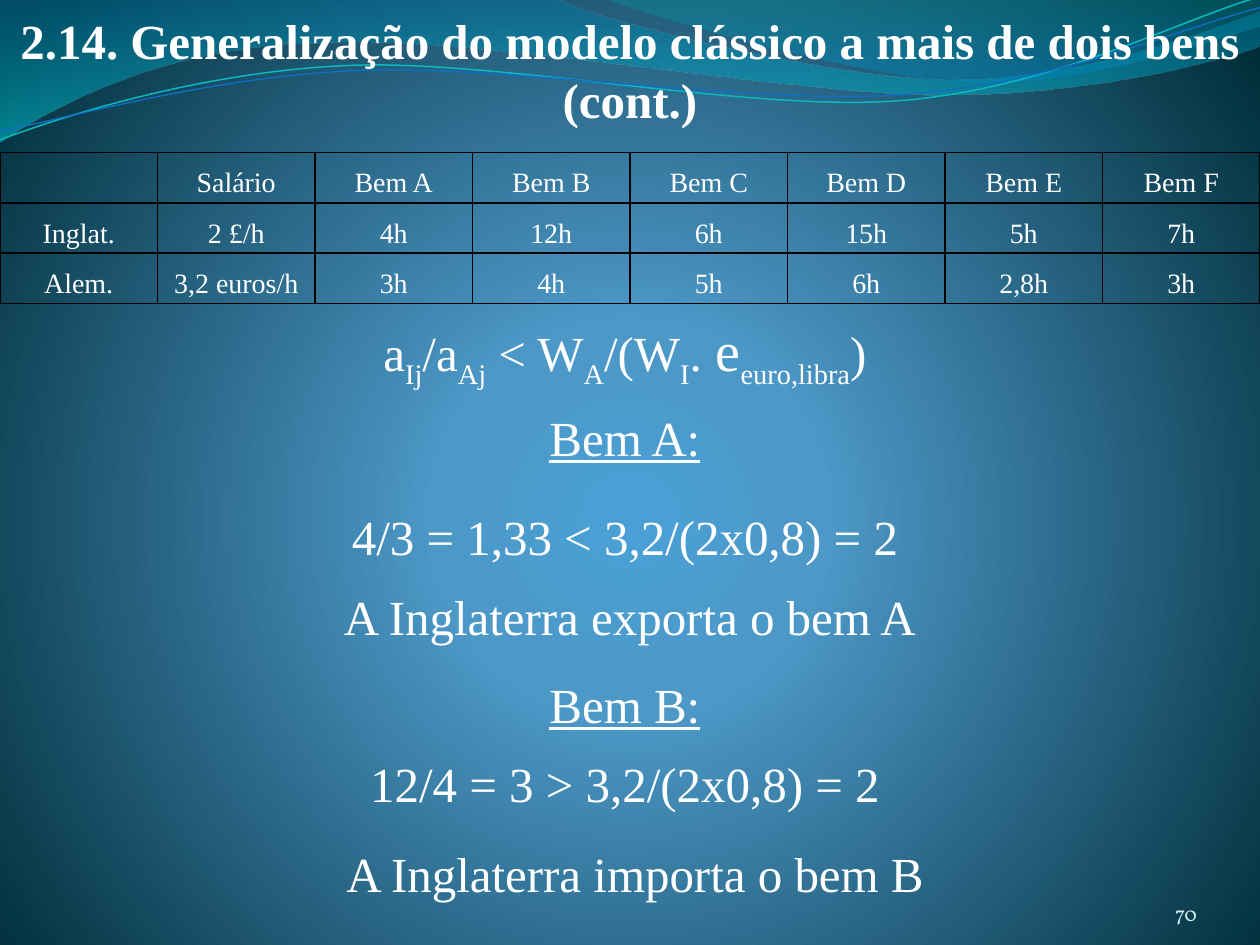
import math

from lxml import etree
from pptx import Presentation
from pptx.dml.color import RGBColor
from pptx.enum import text
from pptx.oxml import parse_xml
from pptx.oxml.ns import nsdecls, qn
from pptx.util import Inches, Pt

SERIF = "Times New Roman"
WHITE = "FFFFFF"
CENTER = text.PP_ALIGN.CENTER

UPPER = [[(0, 0)], [(4.4, -0.01)],
         [(4.76, 0.17), (6.64, 0.63), (7.58, 0.63)],
         [(8.53, 0.63), (9.58, 0.26), (10, 0.09)],
         [(10.01, 0.36)],
         [(9.83, 0.44), (8.7, 0.76), (7.46, 0.75)],
         [(6.22, 0.75), (3.82, 0.28), (2.57, 0.34)],
         [(1.29, 0.36), (0.46, 0.83), (-0.01, 1.13)],
         [(0, 0)]]
RIGHT = [[(4.79, -0.01)],
         [(5.09, 0.11), (6.82, 0.62), (7.69, 0.65)],
         [(8.56, 0.69), (9.61, 0.32), (10, 0.21)],
         [(10, 0)], [(4.79, -0.01)]]
TEAL = [[(0, 1.11)],
        [(0.48, 0.93), (1.58, 0.57), (2.77, 0.52)],
        [(3.95, 0.47), (5.93, 0.89), (7.13, 0.8)],
        [(8.33, 0.71), (9.38, 0.15), (9.98, -0.02)]]
BLUE = [[(0, 1.04)],
        [(0.47, 0.96), (1.64, 0.61), (2.83, 0.56)],
        [(4.03, 0.51), (5.97, 0.84), (7.17, 0.75)],
        [(8.36, 0.67), (9.41, 0.21), (10, 0.06)]]

BANDS = [(UPPER, (-0.01, -0.01, 10.02, 1.14),
          [(0, "0074A1", 45), (100, "00C6CF", 55)]),
         (RIGHT, (4.79, -0.01, 5.21, 0.7),
          [(0, "00A1A9", 30), (80, "008BBF", 45)])]
STRANDS = [(TEAL, (-0.02, 0.22, 10.02, 0.71), "0AB8BF", 0.85),
           (BLUE, (-0.02, 0.3, 10.03, 0.58), "0F6FC6", 0.75)]

ROWS = [["", "Salário", "Bem A", "Bem B", "Bem C", "Bem D", "Bem E", "Bem F"],
        ["Inglat.", "2 £/h", "4h", "12h", "6h", "15h", "5h", "7h"],
        ["Alem.", "3,2 euros/h", "3h", "4h", "5h", "6h", "2,8h", "3h"]]

FORMULA = [("a", 28, 0), ("Ij", 28, 1), ("/a", 28, 0), ("Aj", 28, 1),
           (" < W", 28, 0), ("A", 28, 1), ("/(W", 28, 0), ("I", 28, 1),
           (".", 28, 0), (" e", 32, 0), ("euro,libra", 28, 1), (")", 28, 0)]

LINES = [("Bem A:", -0.04, 3.18, True),
         ("4/3 = 1,33 < 3,2/(2x0,8) = 2", -0.04, 3.97, False),
         ("A Inglaterra exporta o bem A", 0, 4.6, False),
         ("Bem B:", -0.04, 5.3, True),
         ("12/4 = 3 > 3,2/(2x0,8) = 2", -0.04, 5.93, False),
         ("A Inglaterra importa o bem B", 0.04, 6.64, False)]


def paint(code):
    return RGBColor.from_string(code)


def blend(fill, root, stops, shade):
    fill.gradient()
    old = next(root.iter(qn("a:gradFill")))
    marks = "".join(
        f'<a:gs pos="{pos * 1000}"><a:srgbClr val="{code}">'
        + "".join(f'<a:alpha val="{part * 1000}"/>' for part in alpha)
        + '</a:srgbClr></a:gs>'
        for pos, code, *alpha in stops)
    new = parse_xml(f'<a:gradFill {nsdecls("a")} rotWithShape="1">'
                    f'<a:gsLst>{marks}</a:gsLst>{shade}</a:gradFill>')
    old.getparent().replace(old, new)


def backdrop(slide):
    shade = ('<a:path path="circle"><a:fillToRect l="10000" t="110000" '
             'r="10000" b="100000"/></a:path>')
    stops = [(0, "4AA0D6"), (25, "4C98C7"), (100, "002C38")]
    blend(slide.background.fill, slide._element, stops, shade)


def curve(slide, parts, box, turn=0, close=False):
    left, top, wide, high = box
    pen = slide.shapes.build_freeform(Inches(left), Inches(top))
    pen.add_line_segments([(Inches(left + wide), Inches(top + high))], close=False)
    shape = pen.convert_to_shape()
    shape.shadow.inherit = False
    shape.rotation = turn
    route = next(shape._element.iter(qn("a:path")))
    for child in list(route):
        route.remove(child)
    cos, sin = math.cos(math.radians(-turn)), math.sin(math.radians(-turn))
    for spot, part in enumerate(parts):
        tag = "cubicBezTo" if len(part) == 3 else "lnTo" if spot else "moveTo"
        step = etree.SubElement(route, qn(f"a:{tag}"))
        for x, y in part:
            dx, dy = x - left - wide / 2, y - top - high / 2
            etree.SubElement(step, qn("a:pt"),
                             x=str(Inches(wide / 2 + dx * cos - dy * sin)),
                             y=str(Inches(high / 2 + dx * sin + dy * cos)))
    if close:
        etree.SubElement(route, qn("a:close"))
    return shape


def waves(slide):
    for parts, box, stops in BANDS:
        shape = curve(slide, parts, box, close=True)
        shape.line.fill.background()
        blend(shape.fill, shape._element, stops,
              '<a:lin ang="5400000" scaled="1"/>')
    for parts, box, code, width in STRANDS:
        shape = curve(slide, parts, box, turn=357.3)
        shape.fill.background()
        shape.line.color.rgb = paint(code)
        shape.line.width = Pt(width)


def style(para, size, face=SERIF, code=WHITE, align=CENTER):
    para.alignment = align
    para.font.size = Pt(size)
    para.font.name = face
    para.font.color.rgb = paint(code)


def label(slide, box, words="", size=28, **look):
    frame = slide.shapes.add_textbox(*map(Inches, box)).text_frame
    frame.word_wrap = True
    frame.vertical_anchor = text.MSO_ANCHOR.MIDDLE
    para = frame.paragraphs[0]
    para.text = words
    style(para, size, **look)
    return frame


def formula(slide, box):
    para = label(slide, box).paragraphs[0]
    for words, size, low in FORMULA:
        run = para.add_run()
        run.text = words
        run.font.size = Pt(size)
        if low:
            run._r.get_or_add_rPr().set("baseline", "-25000")


def border(cell):
    props = cell._tc.get_or_add_tcPr()
    for side in ("lnL", "lnR", "lnT", "lnB"):
        line = etree.SubElement(props, qn(f"a:{side}"), w=str(Pt(1)))
        solid = etree.SubElement(line, qn("a:solidFill"))
        etree.SubElement(solid, qn("a:srgbClr"), val="000000")


def hours(slide, box):
    grid = slide.shapes.add_table(len(ROWS), len(ROWS[0]),
                                  *map(Inches, box)).table
    for r, row in enumerate(ROWS):
        for c, words in enumerate(row):
            cell = grid.cell(r, c)
            cell.margin_left = cell.margin_right = Inches(0.07)
            cell.margin_top = cell.margin_bottom = 0
            border(cell)
            cell.fill.background()
            para = cell.text_frame.paragraphs[0]
            para.text = words
            style(para, 16)
            para.line_spacing = 1.5
            para.space_before = para.space_after = Pt(6)


def number(slide, box):
    frame = label(slide, box, "70", 12, face="Vollkorn", code="D1EAEE",
                  align=text.PP_ALIGN.RIGHT)
    frame.vertical_anchor = text.MSO_ANCHOR.BOTTOM
    frame.margin_left = frame.margin_right = 0
    frame.margin_top = frame.margin_bottom = 0


def main():
    deck = Presentation()
    deck.slide_width, deck.slide_height = Inches(10), Inches(7.5)
    slide = deck.slides.add_slide(deck.slide_layouts[6])
    backdrop(slide)
    waves(slide)
    title = label(slide, (0.02, 0.03, 9.96, 1.04),
                  "2.14. Generalização do modelo clássico a mais de dois bens (cont.)")
    title.paragraphs[0].font.bold = True
    hours(slide, (0, 1.21, 10, 1.1))
    formula(slide, (-0.04, 2.48, 10, 0.64))
    for words, left, top, under in LINES:
        frame = label(slide, (left, top, 10, 0.57), words)
        if under:
            frame.paragraphs[0].font.underline = True
    number(slide, (8.67, 6.95, 0.83, 0.4))
    deck.save("out.pptx")


if __name__ == "__main__":
    main()
